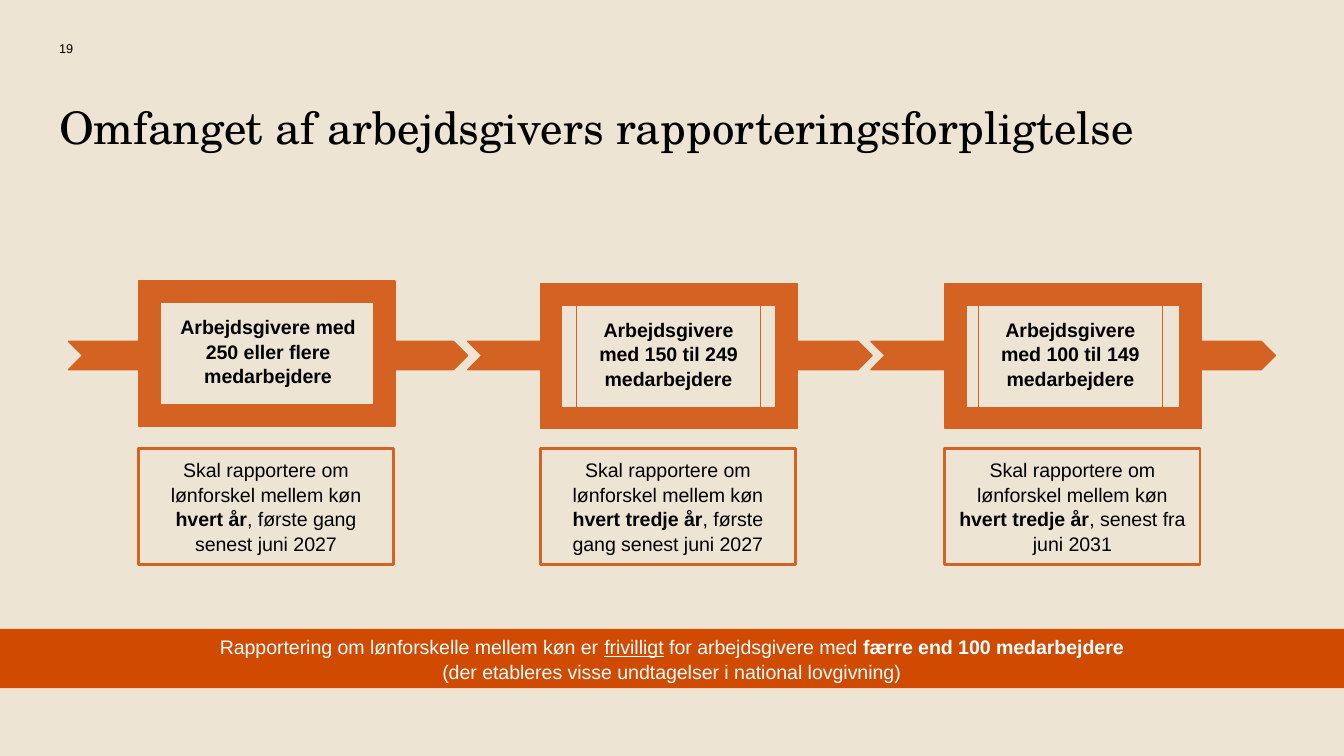
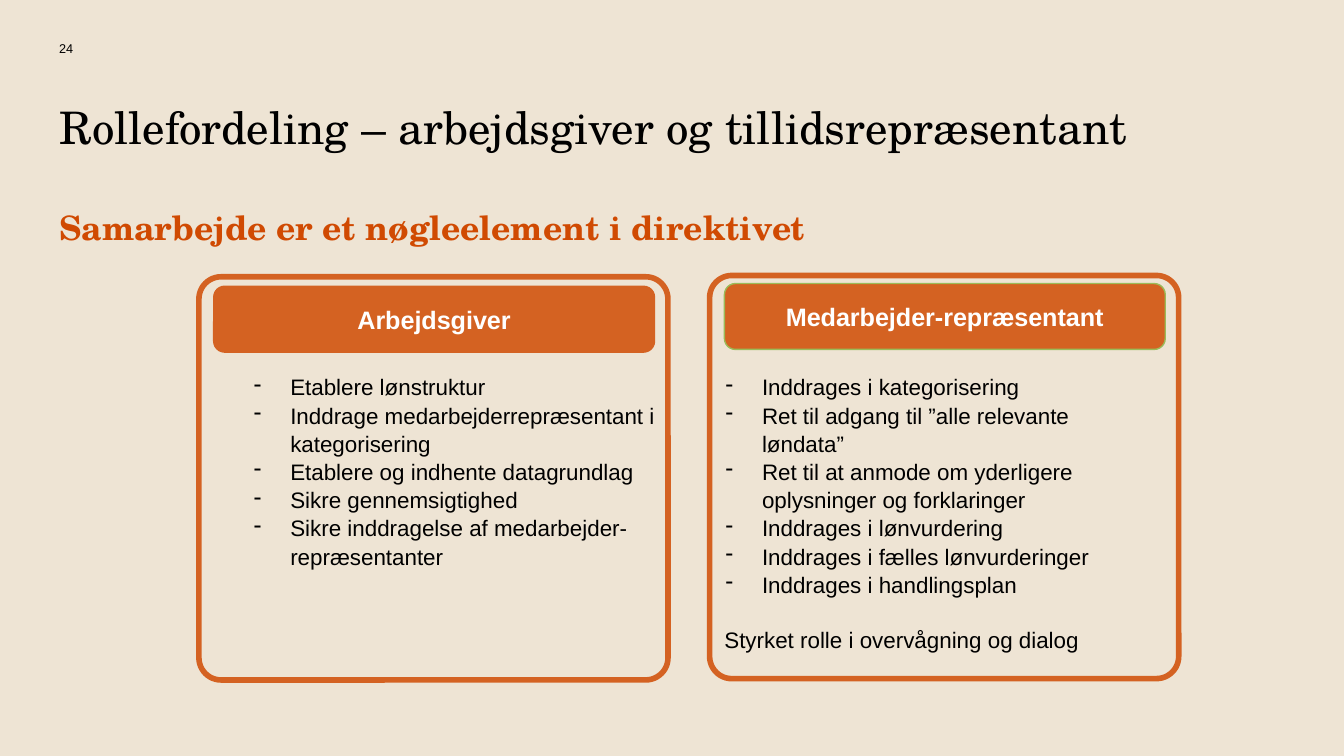
import lxml.etree
import pptx
import pptx.dml.color
import pptx.enum.shapes
import pptx.enum.text
import pptx.oxml.ns
import pptx.util

PX = 9144
WIDE = 1000
SAND, RUST, FLAME, LEAF = "EEE4D4", "D46222", "D04A02", "9BBB59"
BLACK, WHITE = "000000", "FFFFFF"
SANS, SERIF = "Arial", "TeX Gyre Schola"
KIND = pptx.enum.shapes.MSO_SHAPE
ALIGN = pptx.enum.text.PP_ALIGN
ANCHOR = pptx.enum.text.MSO_ANCHOR
BOLD, LINED = {"bold": True}, {"underline": True}

STAGES = [
    {"left": 103, "top": 209, "lead": 52, "trail": 177, "inset": 16, "width": 161,
     "label": "Arbejdsgivere med 250 eller flere medarbejdere",
     "pace": "hvert år", "start": ", første gang senest juni 2027"},
    {"left": 402, "top": 211, "lead": 54, "trail": 179, "inset": 27, "width": 137,
     "label": "Arbejdsgivere med 150 til 249 medarbejdere",
     "pace": "hvert tredje år", "start": ", første gang senest juni 2027"},
    {"left": 703, "top": 211, "lead": 55, "trail": 178, "inset": 25, "width": 137,
     "label": "Arbejdsgivere med 100 til 149 medarbejdere",
     "pace": "hvert tredje år", "start": ", senest fra juni 2031"},
]

ROLES = [
    {"box": (148, 206, 349, 300), "drop": 7, "edge": RUST, "head": "Arbejdsgiver",
     "list": (23, 24, 328, 268), "close": None,
     "tasks": ["Etablere lønstruktur",
               "Inddrage medarbejderrepræsentant i kategorisering",
               "Etablere og indhente datagrundlag",
               "Sikre gennemsigtighed",
               "Sikre inddragelse af medarbejder-repræsentanter"]},
    {"box": (528, 205, 349, 300), "drop": 6, "edge": LEAF,
     "head": "Medarbejder-repræsentant",
     "list": (-6, 25, 307, 250), "close": "Styrket rolle i overvågning og dialog",
     "tasks": ["Inddrages i kategorisering",
               "Ret til adgang til ”alle relevante løndata”",
               "Ret til at anmode om yderligere oplysninger og forklaringer",
               "Inddrages i lønvurdering",
               "Inddrages i fælles lønvurderinger",
               "Inddrages i handlingsplan"]},
]


def tint(code):
    """Return the colour of a hex string."""
    return pptx.dml.color.RGBColor.from_string(code)


def scale(*sizes):
    """Turn px into EMU."""
    return [pptx.util.Emu(size * PX) for size in sizes]


def apply(thing, values):
    """Set attributes from a dict."""
    for name, value in values.items():
        setattr(thing, name, value)


def form(slide, kind, box, fill=None, line=None, width=0.75, bend=None):
    """Add a preset shape."""
    shape = slide.shapes.add_shape(kind, *scale(*box))
    shape.shadow.inherit = False
    if bend is not None:
        shape.adjustments[0] = bend
    if fill:
        shape.fill.solid()
        shape.fill.fore_color.rgb = tint(fill)
    else:
        shape.fill.background()
    if line:
        shape.line.color.rgb = tint(line)
        shape.line.width = pptx.util.Pt(width)
    else:
        shape.line.fill.background()
    return shape


def setup(shape, pads, anchor=ANCHOR.TOP):
    """Prepare a text frame with left, top, right and bottom insets."""
    frame = shape.text_frame
    names = ("margin_left", "margin_top", "margin_right", "margin_bottom")
    apply(frame, {"word_wrap": True, "vertical_anchor": anchor,
                  **dict(zip(names, scale(*pads)))})
    return frame


def write(frame, runs, size, color=BLACK, font=SANS, **style):
    """Fill the next paragraph with (text, format) runs."""
    para = frame.paragraphs[0]
    if para.runs:
        para = frame.add_paragraph()
    apply(para, {"alignment": ALIGN.LEFT, **style})
    for text, extra in runs:
        run = para.add_run()
        run.text = text
        apply(run.font, {"name": font, "size": pptx.util.Pt(size), "bold": False, **extra})
        run.font.color.rgb = tint(color)
    return para


def indent(para, left, hang, mark=None):
    """Indent a paragraph and give it a bullet mark."""
    props = para._p.get_or_add_pPr()
    props.set("marL", str(left * PX))
    props.set("indent", str(hang * PX))
    if mark:
        name = pptx.oxml.ns.qn
        shade = lxml.etree.SubElement(props, name("a:buClr"))
        lxml.etree.SubElement(shade, name("a:srgbClr")).set("val", BLACK)
        lxml.etree.SubElement(props, name("a:buChar")).set("char", mark)


def head(slide, number, title, sub=None):
    """Write the page number, the title and the subtitle."""
    page = slide.shapes.add_textbox(*scale(44, 30, 30, 15))
    write(setup(page, (0,) * 4), [(number, {})], 6.8)
    frame = setup(slide.shapes.add_textbox(*scale(44, 74, 911, 44)), (0,) * 4)
    write(frame, [(title, {})], 24, font=SERIF)
    if sub:
        write(frame, [(sub, BOLD)], 18, FLAME, SERIF, space_before=pptx.util.Pt(29))


def stage(slide, item):
    """Draw one step of the chain with its label and note."""
    left, top = item["left"], item["top"]
    form(slide, KIND.FRAME, (left, top, 191, 108), RUST, RUST, bend=0.147)
    for shift in (-item["lead"], item["trail"]):
        form(slide, KIND.CHEVRON, (left + shift, 254, 68, 21), RUST, RUST, bend=0.5)
    text = {"alignment": ALIGN.CENTER, "line_spacing": 1.05}
    label = form(slide, KIND.RECTANGLE,
                 (left + item["inset"], top + 9, item["width"], 86), line=RUST)
    write(setup(label, (7,) * 4, ANCHOR.MIDDLE), [(item["label"], BOLD)], 10.5, **text)
    note = form(slide, KIND.RECTANGLE, (left, 334, 190, 86), line=RUST, width=1.5)
    runs = [("Skal rapportere om lønforskel mellem køn ", {}),
            (item["pace"], BOLD), (item["start"], {})]
    write(setup(note, (6,) * 4), runs, 10.5, **text)


def band(slide, box, lines):
    """Draw the full-width band with centred lines."""
    frame = setup(form(slide, KIND.RECTANGLE, box, FLAME), (7,) * 4, ANCHOR.MIDDLE)
    for runs in lines:
        write(frame, runs, 10.5, WHITE, alignment=ALIGN.CENTER, line_spacing=1.05)


def panel(slide, item):
    """Draw one role panel with its header and task list."""
    left, top, width, height = item["box"]
    form(slide, KIND.ROUNDED_RECTANGLE, item["box"], line=RUST, width=3, bend=0.055)
    bar = form(slide, KIND.ROUNDED_RECTANGLE, (left + 11, top + item["drop"], width - 21, 49),
               RUST, item["edge"], bend=0.167)
    write(setup(bar, (7, 4, 7, 4), ANCHOR.MIDDLE), [(item["head"], BOLD)], 13.5, WHITE,
          alignment=ALIGN.CENTER)
    dx, dy, wide, high = item["list"]
    area = slide.shapes.add_textbox(*scale(left + dx, top + dy, wide, high))
    frame = setup(area, (7, 47, 7, 7))
    for task in item["tasks"]:
        indent(write(frame, [(task, {})], 12, line_spacing=1.05), 38, -27, "-")
    if item["close"]:
        last = write(frame, [(item["close"], {})], 12, line_spacing=1.05,
                     space_before=pptx.util.Pt(14.4))
        indent(last, 10, 0)


def scope(slide):
    """Build the slide on who must report."""
    head(slide, "19", "Omfanget af arbejdsgivers rapporteringsforpligtelse")
    for item in STAGES:
        stage(slide, item)
    band(slide, (0, 468, WIDE, 44), [
        [("Rapportering om lønforskelle mellem køn er ", {}), ("frivilligt", LINED),
         (" for arbejdsgivere med ", {}), ("færre end 100 medarbejdere", BOLD)],
        [("(der etableres visse undtagelser i national lovgivning)", {})],
    ])


def roles(slide):
    """Build the slide on the division of roles."""
    head(slide, "24", "Rollefordeling – arbejdsgiver og tillidsrepræsentant",
         "Samarbejde er et nøgleelement i direktivet")
    for item in ROLES:
        panel(slide, item)


def main():
    """Build and save the deck."""
    deck = pptx.Presentation()
    apply(deck, {"slide_width": WIDE * PX, "slide_height": WIDE * PX * 9 // 16})
    ground = deck.slide_master.background.fill
    ground.solid()
    ground.fore_color.rgb = tint(SAND)
    for build in (scope, roles):
        build(deck.slides.add_slide(deck.slide_layouts[6]))
    deck.save("out.pptx")


if __name__ == "__main__":
    main()
